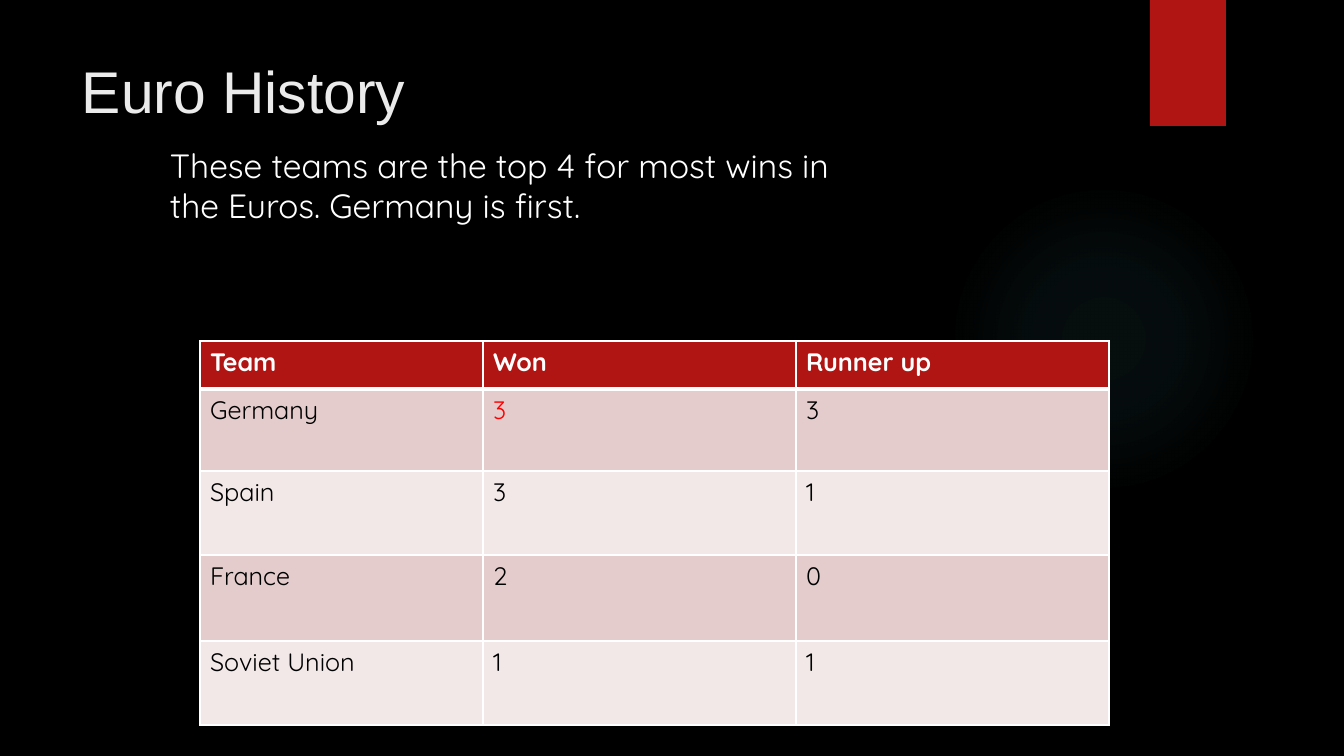
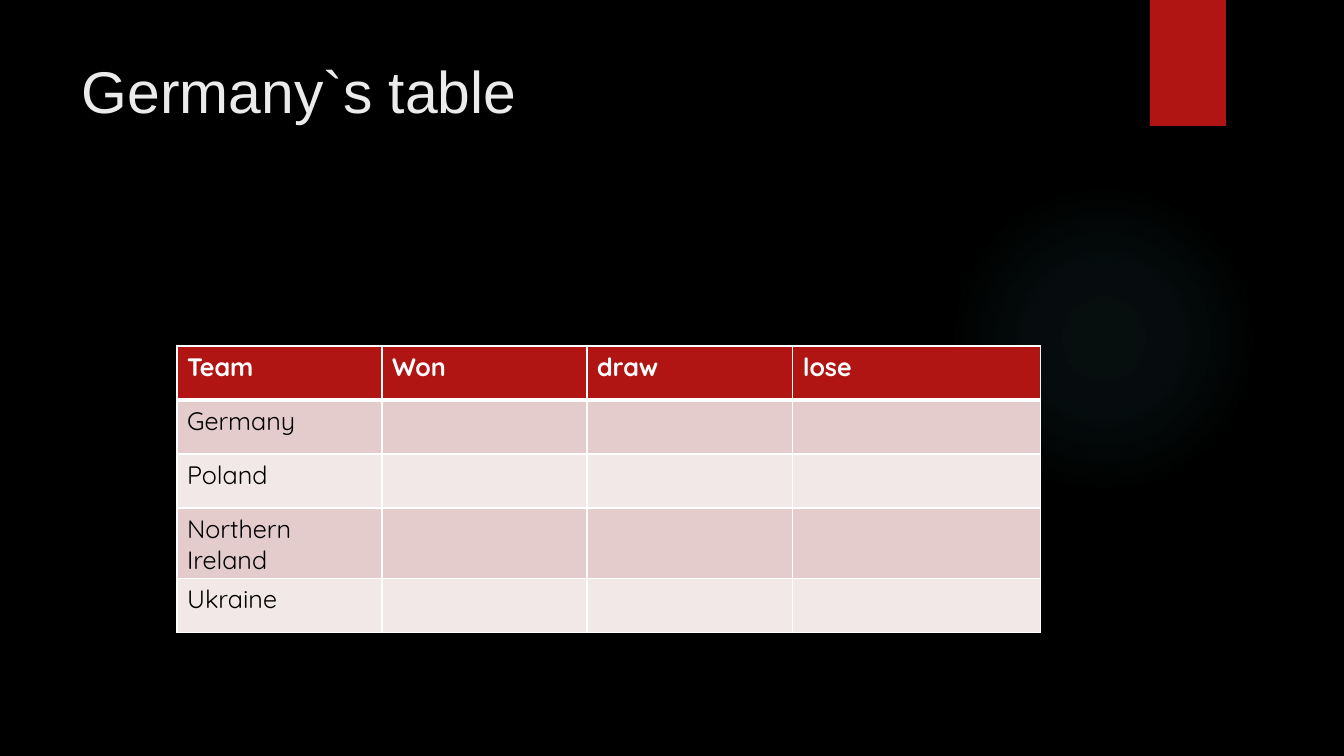
from lxml import etree
from pptx import Presentation
from pptx.dml.color import RGBColor
from pptx.enum.shapes import MSO_SHAPE
from pptx.enum.text import MSO_ANCHOR
from pptx.oxml.ns import qn
from pptx.util import Emu, Pt

RECT, OVAL = MSO_SHAPE.RECTANGLE, MSO_SHAPE.OVAL
TOP = MSO_ANCHOR.TOP
BLACK = RGBColor(0x00, 0x00, 0x00)
WHITE = RGBColor(0xFF, 0xFF, 0xFF)
PALE = RGBColor(0xEB, 0xEB, 0xEB)
CRIMSON = RGBColor(0xB0, 0x15, 0x13)
RED = RGBColor(0xFF, 0x00, 0x00)
GLOW = RGBColor(0x50, 0xB9, 0xC1)
BANDS = RGBColor(0xE4, 0xCC, 0xCC), RGBColor(0xF2, 0xE8, 0xE7)
HEAD, BODY = "Arial", "Quicksand"
SCALE = 914400 / 100.8

SLIDES = [
    {
        "title": "Euro History",
        "note": "These teams are the top 4 for most wins in the Euros. "
                "Germany is first.",
        "at": (200, 341),
        "cols": [283, 313, 313],
        "rows": [48, 82, 84, 86, 84],
        "cells": [
            ["Team", "Won", "Runner up"],
            ["Germany", "3", "3"],
            ["Spain", "3", "1"],
            ["France", "2", "0"],
            ["Soviet Union", "1", "1"],
        ],
        "mark": (1, 1),
    },
    {
        "title": "Germany`s table",
        "at": (177, 346),
        "cols": [205, 205, 206, 248],
        "rows": [54] * 5,
        "cells": [
            ["Team", "Won", "draw", "lose"],
            ["Germany", "", "", ""],
            ["Poland", "", "", ""],
            ["Northern Ireland", "", "", ""],
            ["Ukraine", "", "", ""],
        ],
    },
]


def px(n):
    return Emu(round(n * SCALE))


def style(para, size, face, color, bold=False):
    for font in [run.font for run in para.runs] or [para.font]:
        font.size, font.name, font.bold = Pt(size), face, bold
        font.color.rgb = color


def add_text(slide, box, text, size, face, color):
    frame = slide.shapes.add_textbox(*map(px, box)).text_frame
    frame.word_wrap = True
    frame.vertical_anchor = TOP
    frame.text = text
    style(frame.paragraphs[0], size, face, color)


def add_plain(slide, kind, box, color):
    shape = slide.shapes.add_shape(kind, *map(px, box))
    shape.shadow.inherit = False
    shape.fill.solid()
    shape.fill.fore_color.rgb = color
    shape.line.fill.background()
    return shape


def fade(shape, color, stops):
    grad = etree.Element(qn("a:gradFill"), rotWithShape="1")
    steps = etree.SubElement(grad, qn("a:gsLst"))
    for pos, alpha in stops:
        stop = etree.SubElement(steps, qn("a:gs"), pos=str(pos * 1000))
        tint = etree.SubElement(stop, qn("a:srgbClr"), val=str(color))
        etree.SubElement(tint, qn("a:alpha"), val=str(alpha * 1000))
    way = etree.SubElement(grad, qn("a:path"), path="circle")
    mid = dict.fromkeys("ltrb", "50000")
    etree.SubElement(way, qn("a:fillToRect"), **mid)
    props = shape.fill._xPr
    props.replace(props.find(qn("a:solidFill")), grad)


def edge(cell, base):
    props = cell._tc.get_or_add_tcPr()
    widths = {"lnL": 1, "lnR": 1, "lnT": 1, "lnB": base}
    for spot, (name, wide) in enumerate(widths.items()):
        line = etree.Element(qn("a:" + name), w=str(Pt(wide)))
        fill = etree.SubElement(line, qn("a:solidFill"))
        etree.SubElement(fill, qn("a:srgbClr"), val=str(WHITE))
        props.insert(spot, line)


def add_grid(slide, data):
    cols, rows, cells = data["cols"], data["rows"], data["cells"]
    box = (*data["at"], sum(cols), sum(rows))
    table = slide.shapes.add_table(
        len(rows), len(cols), *map(px, box)).table
    table.first_row = table.horz_banding = False
    for col, wide in zip(table.columns, cols):
        col.width = px(wide)
    for r, (row, high) in enumerate(zip(table.rows, rows)):
        row.height = px(high)
        top = r == 0
        for c, text in enumerate(cells[r]):
            cell = row.cells[c]
            cell.text = text
            cell.fill.solid()
            cell.fill.fore_color.rgb = CRIMSON if top else BANDS[(r - 1) % 2]
            edge(cell, 3 if top else 1)
            ink = RED if (r, c) == data.get("mark") else BLACK
            para = cell.text_frame.paragraphs[0]
            style(para, 18, BODY, WHITE if top else ink, top)


def add_base(deck, title):
    slide = deck.slides.add_slide(deck.slide_layouts[6])
    glow = add_plain(slide, OVAL, (949, 184, 310, 310), GLOW)
    fade(glow, GLOW, [(0, 7), (36, 6), (69, 0)])
    add_plain(slide, RECT, (1150, 0, 76, 126), CRIMSON)
    add_text(slide, (72, 50, 1037, 154), title, 42, HEAD, PALE)
    return slide


def main():
    deck = Presentation()
    deck.slide_width, deck.slide_height = px(1344), px(756)
    back = deck.slide_master.background.fill
    back.solid()
    back.fore_color.rgb = BLACK
    for data in SLIDES:
        slide = add_base(deck, data["title"])
        add_grid(slide, data)
        if "note" in data:
            add_text(slide, (160, 140, 733, 92), data["note"],
                     24, BODY, WHITE)
    deck.save("out.pptx")


if __name__ == "__main__":
    main()
